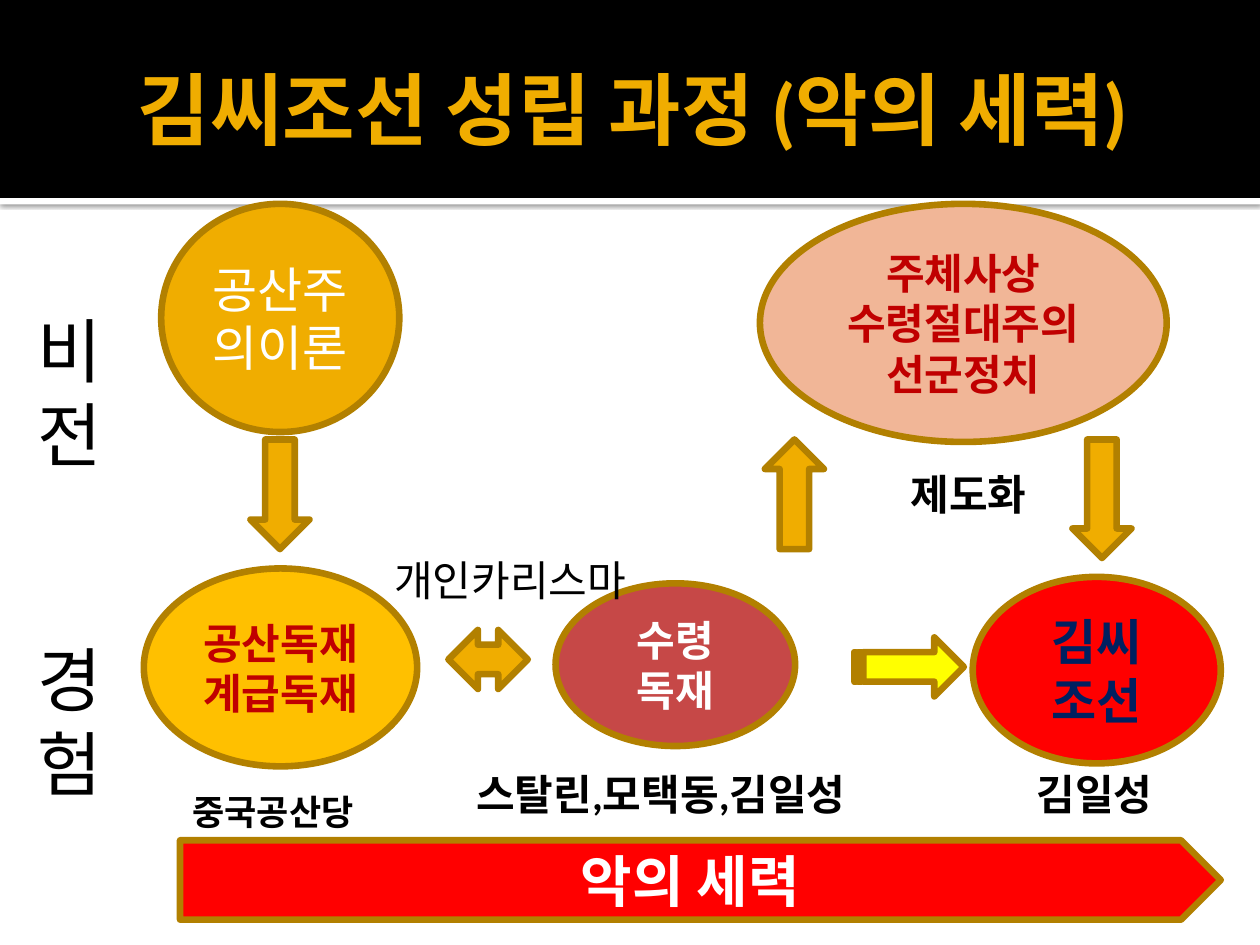
from dataclasses import dataclass
from lxml.etree import SubElement
from pptx import Presentation
from pptx.dml.color import RGBColor as RGB
from pptx.enum.shapes import MSO_SHAPE as Kind
from pptx.enum.text import MSO_ANCHOR as Anchor, PP_ALIGN as Align
from pptx.oxml.ns import qn
from pptx.util import Cm, Pt


@dataclass(frozen=True)
class Theme:
    font: str = "Calibri"
    gold: str = "F0AD00"
    edge: str = "B28000"
    amber: str = "FFC000"
    rose: str = "C64847"
    peach: str = "F1B697"
    red: str = "FF0000"
    yellow: str = "FFFF00"
    dark: str = "C00000"
    navy: str = "002060"
    white: str = "FFFFFF"
    black: str = "000000"
    line: float = 3.78
    title: int = 45
    axis: int = 40
    force: int = 32
    large: int = 28
    body: int = 24
    small: int = 20


T = Theme()

TITLE = "김씨조선 성립 과정 (악의 세력)"

NODES = [
    (Kind.OVAL, (2.9, 11.46, 5.51, 3.99), T.amber, ["공산독재", "계급독재"], T.body, T.dark, True),
    (Kind.OVAL, (3.25, 4.11, 4.8, 4.6), T.gold, ["공산주의이론"], T.large, T.white, False),
    (Kind.OVAL, (11.2, 11.76, 4.83, 3.28), T.rose, ["수령", "독재"], T.body, T.white, True),
    (Kind.OVAL, (15.32, 4.11, 8.2, 4.8), T.peach, ["주체사상\n수령절대주의\n선군정치"], T.body, T.dark, True),
    (Kind.OVAL, (19.61, 11.63, 5, 3.76), T.red, ["김씨", "조선"], T.large, T.navy, True),
    (Kind.PENTAGON, (3.63, 16.94, 20.98, 1.6), T.red, ["악의 세력"], T.force, T.white, True),
]

ARROWS = [
    (Kind.DOWN_ARROW, (5.05, 8.86, 1.19, 2.21), T.gold),
    (Kind.LEFT_RIGHT_ARROW, (9.04, 12.7, 1.6, 1.19), T.gold),
    (Kind.UP_ARROW, (15.42, 8.86, 1.19, 2.21), T.gold),
    (Kind.DOWN_ARROW, (21.62, 8.86, 1.19, 2.39), T.gold),
    (Kind.STRIPED_RIGHT_ARROW, (17.22, 12.85, 2.21, 1.19), T.yellow),
]

LABELS = [
    ("제도화", (18.11, 9.32, 3.2, 1.27), T.body, True, True),
    ("중국공산당", (3.63, 15.82, 4.06, 1.12), T.small, True, False),
    ("개인카리스마", (7.7, 11.05, 5.64, 1.27), T.body, False, False),
    ("스탈린,모택동,김일성", (9.35, 15.37, 8.76, 1.27), T.body, True, True),
    ("비전", (0.51, 6.07, 2.21, 3.68), T.axis, False, True),
    ("경험", (0.51, 12.7, 2.21, 3.68), T.axis, False, True),
    ("김일성", (20.65, 15.37, 3.02, 1.27), T.body, True, False),
]


def place(box):
    return [Cm(n) for n in box]


def write(frame, paras, size, tint, bold, align=Align.CENTER):
    for i, text in enumerate(paras):
        para = frame.paragraphs[0] if i == 0 else frame.add_paragraph()
        para.alignment = align
        for j, part in enumerate(text.split("\n")):
            if j:
                para.add_line_break()
            run = para.add_run()
            run.text = part
            font = run.font
            font.name, font.size, font.bold = T.font, Pt(size), bold
            font.color.rgb = RGB.from_string(tint)


def draw(slide, kind, box, fill, edge=T.edge):
    shape = slide.shapes.add_shape(kind, *place(box))
    shape.shadow.inherit = False
    shape.fill.solid()
    shape.fill.fore_color.rgb = RGB.from_string(fill)
    if edge:
        shape.line.color.rgb = RGB.from_string(edge)
        shape.line.width = Pt(T.line)
    else:
        shape.line.fill.background()
    return shape


def label(slide, box, wrap=True):
    frame = slide.shapes.add_textbox(*place(box)).text_frame
    frame.word_wrap = wrap
    return frame


def shade(shape):
    fx = shape.element.spPr.find(qn("a:effectLst"))
    cast = SubElement(fx, qn("a:outerShdw"), blurRad=str(Pt(2.5)),
                      dist=str(Pt(0.8)), dir="5400000", rotWithShape="0")
    tint = SubElement(cast, qn("a:srgbClr"), val=T.black)
    SubElement(tint, qn("a:alpha"), val="60000")


def header(slide):
    shade(draw(slide, Kind.RECTANGLE, (0, 3.99, 25.4, 0.13), T.white, None))
    draw(slide, Kind.RECTANGLE, (0, 0, 25.4, 3.99), T.black, None)
    frame = label(slide, (1.27, 0.43, 22.86, 3.48))
    frame.vertical_anchor = Anchor.MIDDLE
    frame.margin_right = Cm(0.13)
    write(frame, [TITLE], T.title, T.gold, True)


def main():
    deck = Presentation()
    deck.slide_width, deck.slide_height = Cm(25.4), Cm(19.05)
    slide = deck.slides.add_slide(deck.slide_layouts[6])
    header(slide)
    for kind, box, fill, paras, size, tint, bold in NODES:
        frame = draw(slide, kind, box, fill).text_frame
        frame.word_wrap = True
        frame.vertical_anchor = Anchor.MIDDLE
        write(frame, paras, size, tint, bold)
    for arrow in ARROWS:
        draw(slide, *arrow)
    for text, box, size, bold, wrap in LABELS:
        write(label(slide, box, wrap), [text], size, T.black, bold, Align.LEFT)
    deck.save("out.pptx")


if __name__ == "__main__":
    main()
